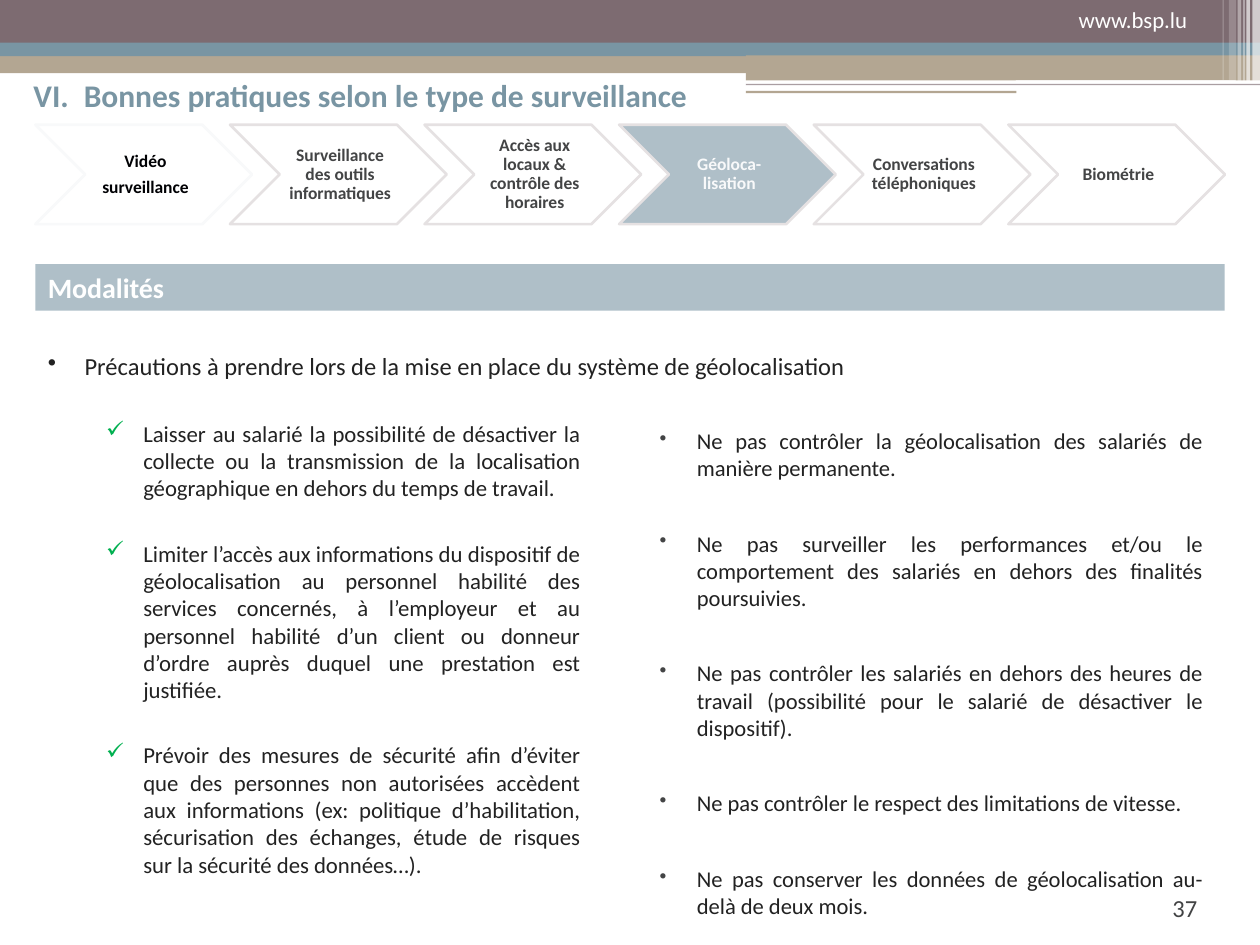
from dataclasses import dataclass

from lxml import etree
from pptx import Presentation
from pptx.dml.color import RGBColor
from pptx.enum import shapes, text
from pptx.oxml.ns import qn
from pptx.util import Pt


@dataclass(frozen=True)
class Theme:
    font: str = "Calibri"
    white: str = "FFFFFF"
    pale: str = "F8F9FA"
    mauve: str = "7D6B71"
    blue: str = "7995A3"
    light_blue: str = "AFBFC8"
    sand: str = "B3A692"
    outline: str = "E5E1E2"
    black: str = "000104"
    grey: str = "434445"
    ink: str = "222222"
    green: str = "00B050"
    title: float = 18
    heading: float = 16
    lead: float = 14
    body: float = 13
    dense: float = 12.9
    step: float = 10


theme = Theme()
ALIGN = text.PP_ALIGN
ANCHOR = text.MSO_ANCHOR

presentation = Presentation()
presentation.slide_width, presentation.slide_height = Pt(720), Pt(540)
slide = presentation.slides.add_slide(presentation.slide_layouts[6])


def add_block(kind, box, fill=None, line=None, opacity=100):
    """Add a preset shape without shadow; opacity is a percentage."""
    shape = slide.shapes.add_shape(kind, *map(Pt, box))
    shape.shadow.inherit = False
    if fill:
        shape.fill.solid()
        shape.fill.fore_color.rgb = RGBColor.from_string(fill)
        if opacity < 100:
            color = shape.fill._xPr.find(qn("a:solidFill"))[0]
            etree.SubElement(color, qn("a:alpha"), val=str(opacity * 1000))
    else:
        shape.fill.background()
    if line:
        shape.line.color.rgb = RGBColor.from_string(line)
        shape.line.width = Pt(1.5)
    else:
        shape.line.fill.background()
    return shape


def write(shape, lines, size, color, bold=False, align=ALIGN.LEFT, anchor=ANCHOR.TOP,
          gap=0, after=0, spacing=None, bullet=None, bullet_color=None,
          bullet_size=100, indent=(0, 0), tab=None):
    """Fill a shape with paragraphs; gap is the space before all but the first."""
    frame = shape.text_frame
    frame.word_wrap = True
    frame.vertical_anchor = anchor
    frame.text = "\n".join(lines)
    for number, paragraph in enumerate(frame.paragraphs):
        properties = paragraph._p.get_or_add_pPr()
        if bullet:
            paragraph.level = 1
            properties.set("marL", str(Pt(indent[0])))
            properties.set("indent", str(Pt(indent[1])))
            bullet_fill = etree.SubElement(properties, qn("a:buClr"))
            etree.SubElement(bullet_fill, qn("a:srgbClr"), val=bullet_color or color)
            etree.SubElement(properties, qn("a:buSzPct"), val=str(bullet_size * 1000))
            etree.SubElement(properties, qn("a:buChar"), char=bullet)
        if tab:
            tabs = etree.SubElement(properties, qn("a:tabLst"))
            etree.SubElement(tabs, qn("a:tab"), pos=str(Pt(tab)), algn="l")
        paragraph.alignment = align
        paragraph.space_before = Pt(gap if number else 0)
        paragraph.space_after = Pt(after)
        if spacing:
            paragraph.line_spacing = spacing
        for run in paragraph.runs:
            run.font.name = theme.font
            run.font.size = Pt(size)
            run.font.bold = bold
            run.font.color.rgb = RGBColor.from_string(color)


# Header bands
RECTANGLE = shapes.MSO_SHAPE.RECTANGLE
for box, fill in [
    ((426.2, 28, 293.8, 7), theme.blue),
    ((-3, 31, 521.3, 10.8), theme.sand),
    ((-3, -2, 723, 26.5), theme.mauve),
    ((-3, 24.3, 723, 7.8), theme.blue),
    ((426.2, 31.7, 293.8, 14.2), theme.sand),
]:
    add_block(RECTANGLE, box, fill)
add_block(shapes.MSO_SHAPE.ROUNDED_RECTANGLE, (580.3, 46, 126, 2.6), theme.white)

# Translucent stripes in the corner: left, width, height, opacity
for left, width, height, opacity in [
    (715.7, 4.3, 51, 65), (712.2, 2, 51, 65), (710.5, 0.7, 51, 60),
    (707.2, 2, 51, 40), (702.2, 4, 48, 20), (698.6, 0.7, 48, 30),
]:
    add_block(RECTANGLE, (left, -2, width, height), theme.white, opacity=opacity)
add_block(RECTANGLE, (426.2, 48, 293.8, 0.7), theme.mauve, opacity=65)
add_block(RECTANGLE, (426.2, 52, 154.6, 1.3), theme.sand)

# Page number, web address and title
for top, label, size, color in [
    (506.9, "37", theme.lead, theme.grey),
    (0, "www.bsp.lu", theme.body, theme.white),
]:
    left = 586.8 if top else 581
    text_box = slide.shapes.add_textbox(Pt(left), Pt(top), Pt(104.4), Pt(36))
    write(text_box, [label], size, color, align=ALIGN.RIGHT)
title = slide.shapes.add_textbox(Pt(12), Pt(-7.9), Pt(699), Pt(124.6))
write(title, ["VI. \tBonnes pratiques selon le type de surveillance"], theme.title,
      theme.blue, bold=True, anchor=ANCHOR.MIDDLE, tab=28.8)

# Steps
steps = [
    (["Vidéo", "surveillance"], None, theme.pale, theme.black),
    (["Surveillance des outils informatiques"], None, theme.outline, theme.grey),
    (["Accès aux locaux & contrôle des horaires"], None, theme.outline, theme.grey),
    (["Géoloca-lisation"], theme.light_blue, theme.outline, theme.pale),
    (["Conversations téléphoniques"], None, theme.outline, theme.grey),
    (["Biométrie"], None, theme.outline, theme.grey),
]
for index, (label, fill, line, color) in enumerate(steps):
    chevron = add_block(shapes.MSO_SHAPE.CHEVRON,
                        (20.2 + 111.2 * index, 71.3, 123.8, 56.8), fill, line)
    frame = chevron.text_frame
    frame.margin_left = Pt(3)
    frame.margin_top = frame.margin_right = frame.margin_bottom = Pt(1)
    write(chevron, label, theme.step, color, bold=True, align=ALIGN.CENTER,
          anchor=ANCHOR.MIDDLE, after=4, spacing=0.9)

# Section heading and lead sentence
heading = add_block(RECTANGLE, (20.2, 151, 679.6, 26.6), theme.light_blue)
write(heading, ["Modalités"], theme.heading, theme.white, bold=True)
lead = slide.shapes.add_textbox(Pt(20.2), Pt(196.8), Pt(679.6), Pt(24.2))
write(lead, ["Précautions à prendre lors de la mise en place du système de géolocalisation"],
      theme.lead, theme.ink, bullet="•", indent=(21, -21))

# Two columns of measures
measures = slide.shapes.add_textbox(Pt(32.6), Pt(236.2), Pt(305.8), Pt(249))
write(measures, [
    "Laisser au salarié la possibilité de désactiver la collecte ou la transmission "
    "de la localisation géographique en dehors du temps de travail.",
    "Limiter l’accès aux informations du dispositif de géolocalisation au personnel "
    "habilité des services concernés, à l’employeur et au personnel habilité d’un "
    "client ou donneur d’ordre auprès duquel une prestation est justifiée.",
    "Prévoir des mesures de sécurité afin d’éviter que des personnes non autorisées "
    "accèdent aux informations (ex: politique d’habilitation, sécurisation des "
    "échanges, étude de risques sur la sécurité des données…).",
], theme.body, theme.ink, align=ALIGN.JUSTIFY, gap=21.6, bullet="✓",
      bullet_color=theme.green, indent=(42.2, -21.3))

limits = slide.shapes.add_textbox(Pt(348.7), Pt(240.3), Pt(345.6), Pt(290.5))
write(limits, [
    "Ne pas contrôler la géolocalisation des salariés de manière permanente.",
    "Ne pas surveiller les performances et/ou le comportement des salariés en dehors "
    "des finalités poursuivies.",
    "Ne pas contrôler les salariés en dehors des heures de travail (possibilité pour "
    "le salarié de désactiver le dispositif).",
    "Ne pas contrôler le respect des limitations de vitesse.",
    "Ne pas conserver les données de géolocalisation au-delà de deux mois.",
], theme.dense, theme.ink, align=ALIGN.JUSTIFY, gap=27.8, bullet="•",
      bullet_color=theme.grey, bullet_size=90, indent=(42.5, -21.3))

presentation.save("out.pptx")
